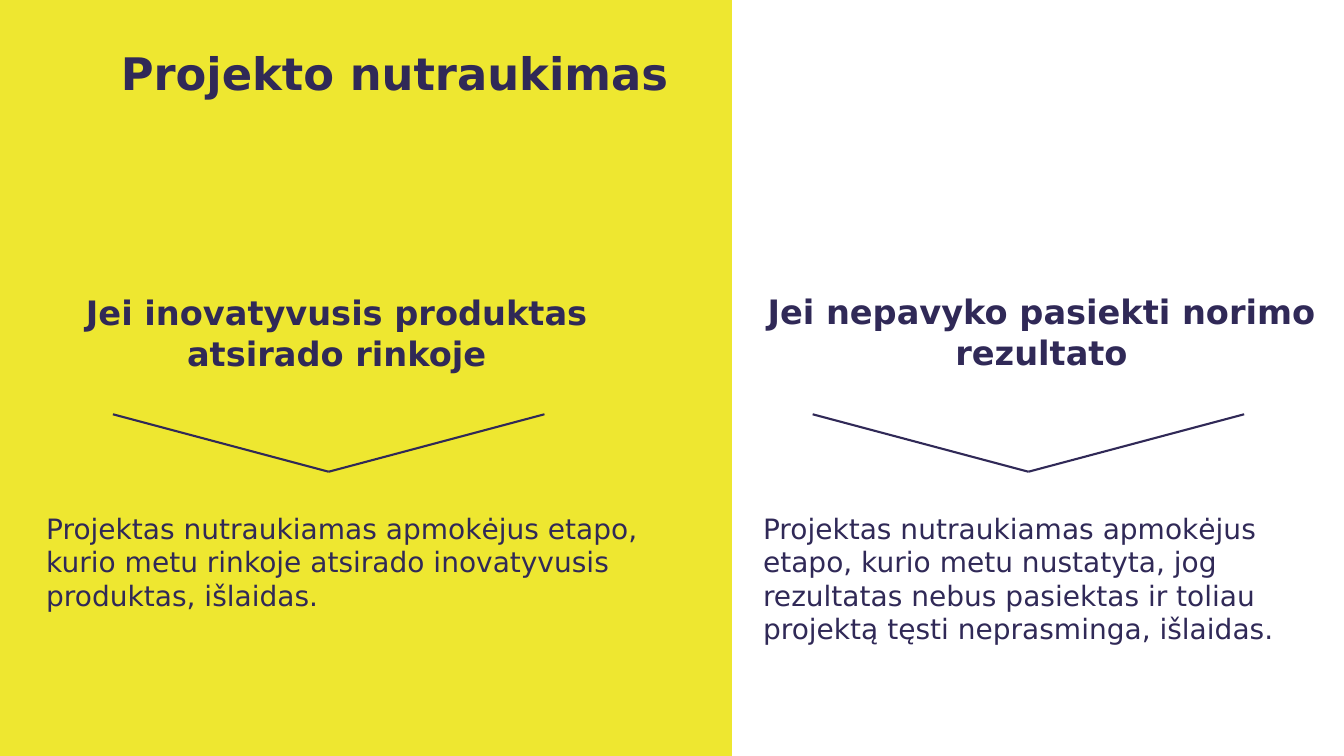
from pptx import Presentation
from pptx.dml.color import RGBColor
from pptx.enum.shapes import MSO_CONNECTOR, MSO_SHAPE
from pptx.enum.text import MSO_ANCHOR, PP_ALIGN
from pptx.oxml.ns import qn
from pptx.util import Inches, Pt
from lxml.etree import SubElement

INK = "302957"
YELLOW = "EEE730"
FONT = "DejaVu Sans"

# Heading box, arrow left edge, body box, heading text, body text
CASES = [
    ((0.36, 2.85, 5.96, 0.91), 1.12, (0.36, 5.02, 6.25, 1.11),
     "Jei inovatyvusis produktas atsirado rinkoje",
     "Projektas nutraukiamas apmokėjus etapo, kurio metu rinkoje atsirado "
     "inovatyvusis produktas, išlaidas."),
    ((7.3, 2.84, 6.06, 0.91), 8.06, (7.47, 5.02, 5.86, 1.45),
     "Jei nepavyko pasiekti norimo rezultato",
     "Projektas nutraukiamas apmokėjus etapo, kurio metu nustatyta, jog "
     "rezultatas nebus pasiektas ir toliau projektą tęsti neprasminga, išlaidas."),
]


def color(code):
    return RGBColor.from_string(code)


def add_text(slide, box, text, size, bold=False, align=PP_ALIGN.LEFT,
             anchor=MSO_ANCHOR.TOP):
    frame = slide.shapes.add_textbox(*map(Inches, box)).text_frame
    frame.word_wrap = True
    frame.vertical_anchor = anchor
    para = frame.paragraphs[0]
    para.text = text
    para.alignment = align
    font = para.font
    font.name, font.size, font.bold = FONT, Pt(size), bold
    font.color.rgb = color(INK)


def add_panel(slide, box):
    panel = slide.shapes.add_shape(MSO_SHAPE.RECTANGLE, *map(Inches, box))
    panel.shadow.inherit = False
    panel.fill.solid()
    panel.fill.fore_color.rgb = color(YELLOW)
    panel.line.fill.background()


def add_arrow(slide, left, top, width, height):
    """Draw a wide open V from two lines that meet at its tip."""
    group = slide.shapes.add_group_shape()
    mid = left + width / 2
    for side in (left, left + width):
        ends = map(Inches, (side, top, mid, top + height))
        line = group.shapes.add_connector(MSO_CONNECTOR.STRAIGHT, *ends)
        line.line.color.rgb = color(INK)
        line.line.width = Pt(1.5)
        SubElement(line._element.spPr, qn("a:effectLst"))


def add_case(slide, head_box, arrow_left, body_box, head, body):
    add_text(slide, head_box, head, 24, True, PP_ALIGN.CENTER)
    add_arrow(slide, arrow_left, 4.11, 4.28, 0.57)
    add_text(slide, body_box, body, 20)


def main():
    deck = Presentation()
    deck.slide_width, deck.slide_height = Inches(13.33), Inches(7.5)
    slide = deck.slides.add_slide(deck.slide_layouts[6])
    add_panel(slide, (0, 0, 7.26, 7.5))
    add_text(slide, (1.1, 0.32, 11.5, 0.8), "Projekto nutraukimas", 32, True,
             anchor=MSO_ANCHOR.MIDDLE)
    for case in CASES:
        add_case(slide, *case)
    deck.save("out.pptx")


if __name__ == "__main__":
    main()
